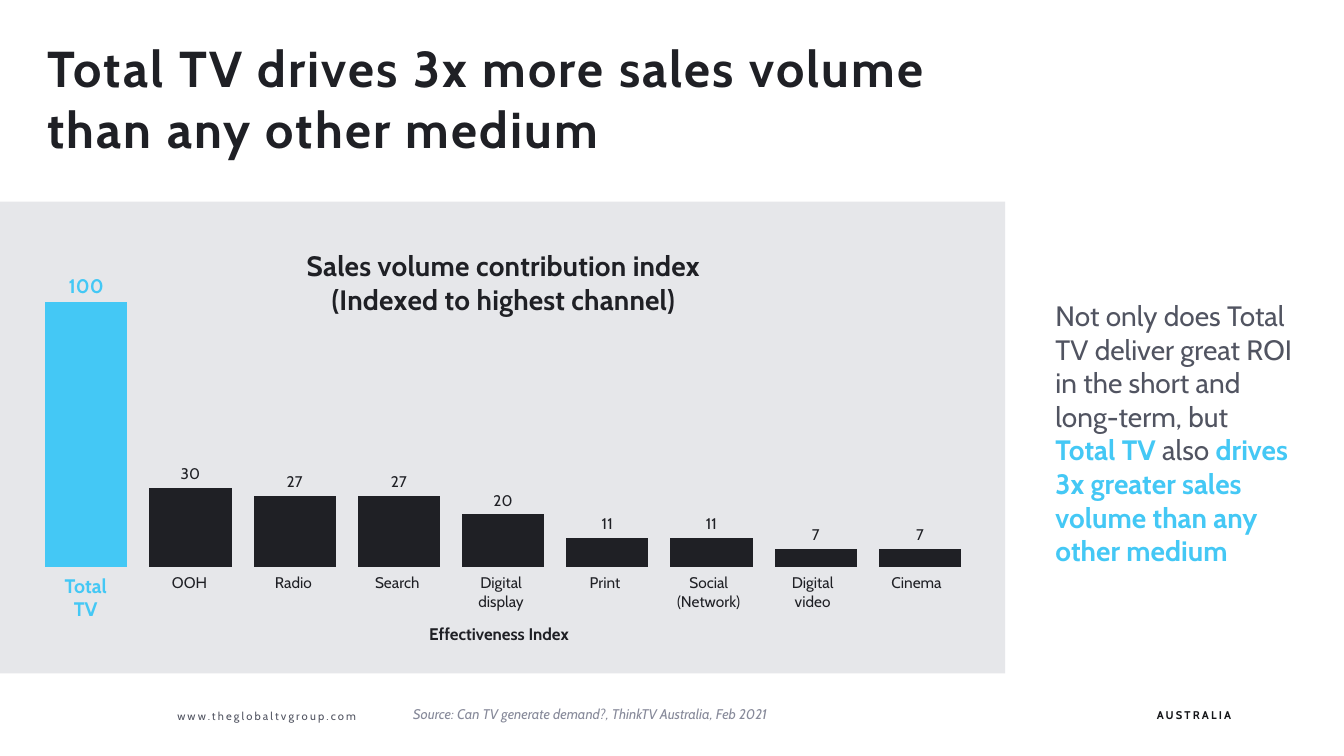
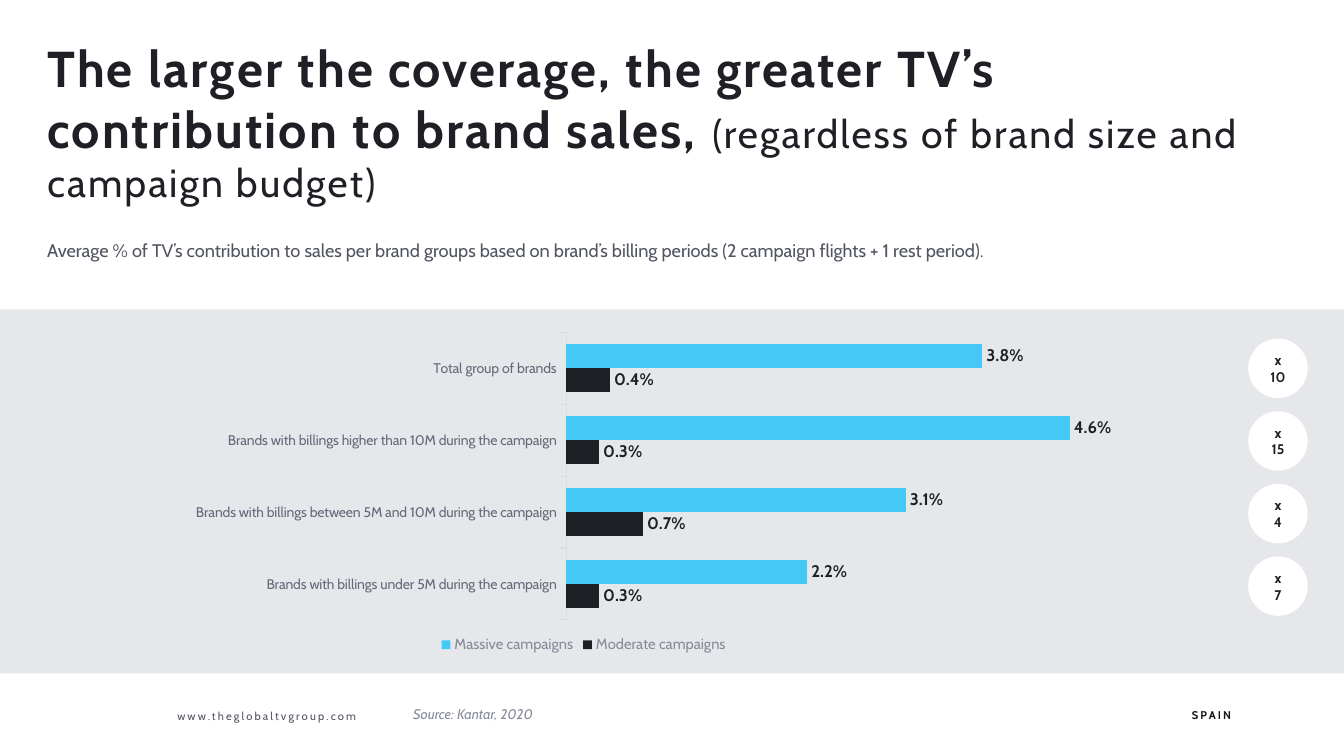
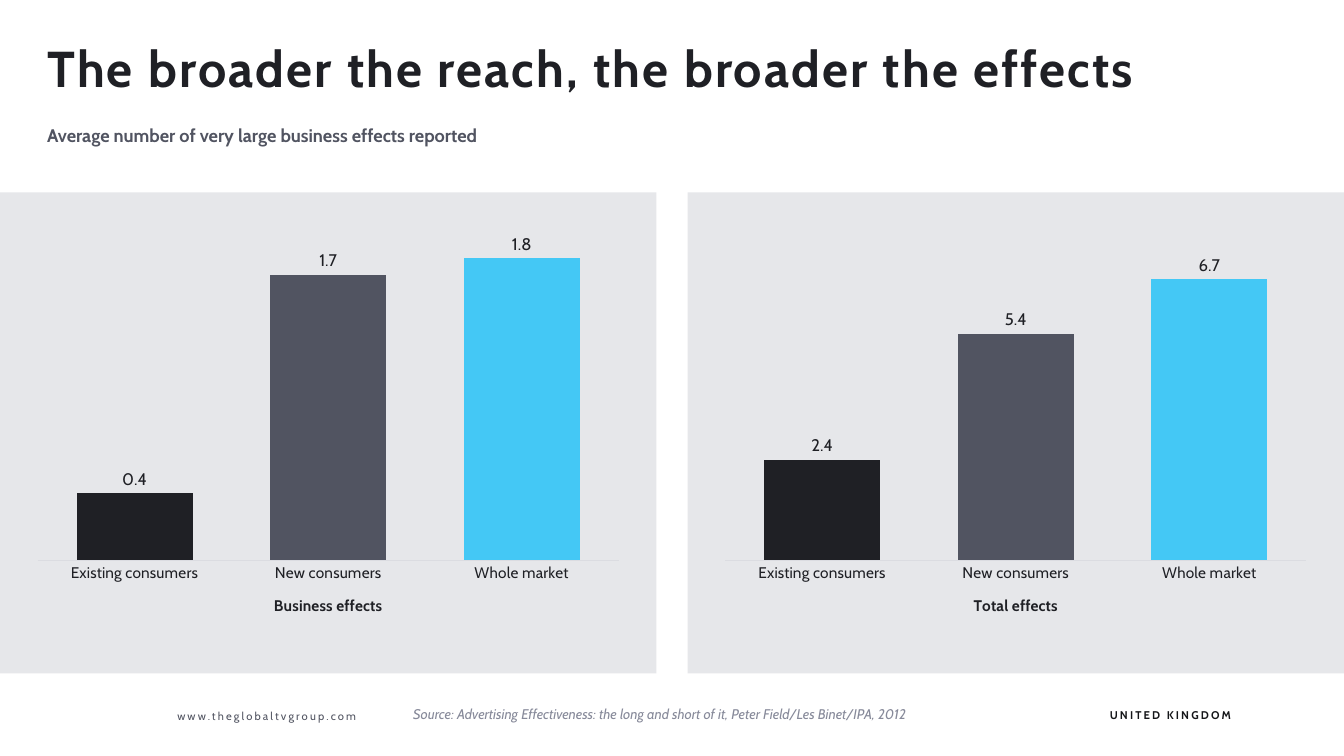
from pptx import Presentation
from pptx.chart.data import CategoryChartData
from pptx.dml.color import RGBColor
from pptx.enum.chart import XL_CHART_TYPE, XL_LABEL_POSITION, XL_LEGEND_POSITION, XL_TICK_MARK
from pptx.enum.shapes import MSO_SHAPE
from pptx.enum.text import MSO_ANCHOR, MSO_AUTO_SIZE, PP_ALIGN
from pptx.oxml import parse_xml
from pptx.oxml.ns import nsdecls, qn
from pptx.util import Inches, Pt

COLUMNS, BARS = XL_CHART_TYPE.COLUMN_CLUSTERED, XL_CHART_TYPE.BAR_CLUSTERED
RECT, OVAL = MSO_SHAPE.RECTANGLE, MSO_SHAPE.OVAL
TOP, MIDDLE = MSO_ANCHOR.TOP, MSO_ANCHOR.MIDDLE
LEFT, CENTER, RIGHT = PP_ALIGN.LEFT, PP_ALIGN.CENTER, PP_ALIGN.RIGHT
OUTSIDE_END = XL_LABEL_POSITION.OUTSIDE_END

FONT = "Cabin"
COLORS = {
    "black": "1F2025", "footer": "151619", "slate": "515461", "label": "666979",
    "grey": "878A9A", "line": "DBDCE1", "panel": "E6E7EA", "blue": "44C8F5", "white": "FFFFFF",
}
WIDTH, HEIGHT = 13.33, 7.5
MARGIN, CONTENT_W = 0.37, 12.59
PANEL_BOTTOM = 6.68

TITLE = {"size": 36, "bold": True, "color": "black", "spc": 1.5}
TITLE_LIGHT = {**TITLE, "size": 28, "bold": False}
SUBTITLE = {"size": 13, "color": "slate"}
SITE = {"size": 8, "color": "slate", "spc": 1.5}
COUNTRY = {"size": 8, "bold": True, "color": "footer", "spc": 1.5}
SOURCE = {"size": 10, "italic": True, "color": "grey"}
BODY = {"size": 20, "color": "slate"}
BODY_BLUE = {"size": 20, "bold": True, "color": "blue"}
CHART_TITLE = {"size": 20, "bold": True, "color": "black"}
AXIS_TITLE = {"size": 11, "bold": True, "color": "black"}
BAR_NAME = {"size": 11, "color": "black"}
BAR_NAME_BLUE = {"size": 14, "bold": True, "color": "blue"}
INDEX_NAME = {"size": 12, "bold": True, "color": "black"}
VALUE = {"size": 12, "color": "black"}
VALUE_BOLD = {**VALUE, "bold": True}

SITE_NAME = "www.theglobaltvgroup.com"

# Text is a list of paragraphs; a paragraph is a list of (text, format) runs.
SALES = {
    "title": [[("Total TV drives 3x more sales volume", TITLE)], [("than any other medium", TITLE)]],
    "source": "Source: Can TV generate demand?, ThinkTV Australia, Feb 2021",
    "country": "AUSTRALIA",
    "chart_title": [[("Sales volume contribution index", CHART_TITLE)],
                    [("(Indexed to highest channel)", CHART_TITLE)]],
    "media": [("Total TV", 100), ("OOH", 30), ("Radio", 27), ("Search", 27),
              ("Digital\ndisplay", 20), ("Print", 11), ("Social\n(Network)", 11),
              ("Digital video", 7), ("Cinema", 7)],
    "message": [[("Not only does Total TV deliver great ROI in the short and long-term, but \n", BODY),
                 ("Total TV ", BODY_BLUE), ("also ", BODY),
                 ("drives 3x greater sales volume than any other medium", BODY_BLUE)]],
}
COVERAGE = {
    "title": [[("The larger the coverage, the greater TV’s contribution to brand sales, ", TITLE),
               ("(regardless of brand size and campaign budget)", TITLE_LIGHT)]],
    "source": "Source: Kantar, 2020",
    "country": "SPAIN",
    "subtitle": "Average % of TV’s contribution to sales per brand groups based on brand’s "
                "billing periods (2 campaign flights + 1 rest period).",
    "groups": ["Brands with billings under 5M during the campaign",
               "Brands with billings between 5M and 10M during the campaign",
               "Brands with billings higher than 10M during the campaign",
               "Total group of brands"],
    "series": [("Moderate campaigns", [0.003, 0.007, 0.003, 0.004]),
               ("Massive campaigns", [0.022, 0.031, 0.046, 0.038])],
    "factors": [10, 15, 4, 7],
}
REACH = {
    "title": [[("The broader the reach, the broader the effects", TITLE)]],
    "source": "Source: Advertising Effectiveness: the long and short of it, "
              "Peter Field/Les Binet/IPA, 2012",
    "country": "UNITED KINGDOM",
    "subtitle": "Average number of very large business effects reported",
    "audiences": ["Existing consumers", "New consumers", "Whole market"],
    "effects": [("Business effects", [0.4, 1.7, 1.8], 2), ("Total effects", [2.4, 5.4, 6.7], 8)],
}


def rgb(name):
    return RGBColor.from_string(COLORS[name])


def box(*lengths):
    return [Inches(n) for n in lengths]


def set_font(font, fmt):
    font.name = FONT
    for key, value in fmt.items():
        if key == "size":
            font.size = Pt(value)
        elif key == "color":
            font.color.rgb = rgb(value)
        elif key != "spc":
            setattr(font, key, value)


def write(tf, paragraphs, align=None, after=None):
    for i, runs in enumerate(paragraphs):
        p = tf.paragraphs[0] if i == 0 else tf.add_paragraph()
        if align is not None:
            p.alignment = align
        if after is not None:
            p.space_after = Pt(after)
        for text, fmt in runs:
            for j, line in enumerate(text.split("\n")):
                if j:
                    p.add_line_break()
                if line:
                    r = p.add_run()
                    r.text = line
                    set_font(r.font, fmt)
                    if "spc" in fmt:
                        r.font._element.set("spc", str(int(fmt["spc"] * 100)))


def add_text(slide, at, paragraphs, align=LEFT, anchor=TOP, after=None):
    tf = slide.shapes.add_textbox(*box(*at)).text_frame
    tf.word_wrap = True
    tf.vertical_anchor = anchor
    write(tf, paragraphs, align, after)


def add_plain_shape(slide, kind, at, color):
    sp = slide.shapes.add_shape(kind, *box(*at))
    sp.shadow.inherit = False
    sp.fill.solid()
    sp.fill.fore_color.rgb = rgb(color)
    sp.line.fill.background()
    return sp


def add_panel(slide, left, top, width):
    add_plain_shape(slide, RECT, (left, top, width, PANEL_BOTTOM - top), "panel")


def add_slide(prs, content):
    """Add a slide with the title and footer that all slides share."""
    slide = prs.slides.add_slide(prs.slide_layouts[5])
    title = slide.shapes.title
    title.left, title.top, title.width, title.height = box(MARGIN, 0.32, CONTENT_W, 0.73)
    tf = title.text_frame
    tf.word_wrap = True
    tf.auto_size = MSO_AUTO_SIZE.NONE
    tf.vertical_anchor = TOP
    write(tf, content["title"], LEFT)
    add_text(slide, (1.66, 6.98, 2.79, 0.24), [[(SITE_NAME, SITE)]], anchor=MIDDLE)
    add_text(slide, (4, 6.95, 7.57, 0.27), [[(content["source"], SOURCE)]])
    add_text(slide, (9.43, 6.97, 2.88, 0.25), [[(content["country"], COUNTRY)]], RIGHT, MIDDLE)
    return slide


def add_bar_chart(slide, kind, at, categories, series, plot_box, scale, gap, overlap, fmt):
    """Add a clustered chart with a hidden value axis and a fixed plot area."""
    data = CategoryChartData(number_format=fmt)
    data.categories = categories
    for name, values in series:
        data.add_series(name, values)
    chart = slide.shapes.add_chart(kind, *box(*at), data).chart
    set_font(chart.font, {"size": 10, "color": "black"})
    chart.has_title = chart.has_legend = False
    plot = chart.plots[0]
    plot.vary_by_categories = False
    plot.gap_width, plot.overlap = gap, overlap
    axis = chart.value_axis
    axis.minimum_scale, axis.maximum_scale = scale
    axis.has_major_gridlines = False
    axis.visible = False

    area = chart._chartSpace.chart.plotArea
    for old in area.findall(qn("c:layout")):
        area.remove(old)
    parts = "".join(f'<c:{k} val="{v}"/>' for k, v in zip("xywh", plot_box))
    area.insert(0, parse_xml(
        f'<c:layout {nsdecls("c")}><c:manualLayout><c:layoutTarget val="inner"/>'
        f'<c:xMode val="edge"/><c:yMode val="edge"/>{parts}</c:manualLayout></c:layout>'))
    return chart


def style_series(series, color, label, fmt):
    series.format.fill.solid()
    series.format.fill.fore_color.rgb = rgb(color)
    series.invert_if_negative = False
    labels = series.data_labels
    labels.show_value = True
    labels.position = OUTSIDE_END
    labels.number_format, labels.number_format_is_linked = fmt, False
    set_font(labels.font, label)


def style_category_axis(axis, tick, label):
    axis.major_tick_mark = tick
    axis.minor_tick_mark = XL_TICK_MARK.NONE
    axis.format.line.color.rgb = rgb("line")
    axis.format.line.width = Pt(0.75)
    set_font(axis.tick_labels.font, label)


def build_sales(prs):
    slide = add_slide(prs, SALES)
    add_panel(slide, 0, 2, 9.97)
    add_text(slide, (10.37, 1.92, 2.6, 4.75), SALES["message"], anchor=MIDDLE, after=12)

    media = SALES["media"]
    series = [(f"Series {i}", [value]) for i, (_, value) in enumerate(media, 1)]
    chart = add_bar_chart(slide, COLUMNS, (0.44, 2.28, 9.11, 4.23), ["1"], series,
                          (0.001, 0.108, 0.997, 0.746), (-10, 110), 0, -27, "0")
    chart.has_title = True
    write(chart.chart_title.text_frame, SALES["chart_title"])
    chart.category_axis.visible = False

    bar_w, pitch = 0.82, 1.03
    for i, (s, (name, _)) in enumerate(zip(chart.plots[0].series, media)):
        lead = i == 0
        label = BAR_NAME_BLUE if lead else BAR_NAME
        style_series(s, "blue" if lead else "black", label, "0")
        width = 1.04 if "(" in name else bar_w
        left = 0.44 + i * pitch + (bar_w - width) / 2
        add_text(slide, (left, 5.64, width, 0.47), [[(name, label)]], CENTER, after=12)
    add_text(slide, (0.36, 6.14, 9.18, 0.3), [[("Effectiveness Index", INDEX_NAME)]], CENTER)


def build_coverage(prs):
    slide = add_slide(prs, COVERAGE)
    add_panel(slide, 0, 3.07, WIDTH)
    add_text(slide, (MARGIN, 2.33, CONTENT_W, 0.33), [[(COVERAGE["subtitle"], SUBTITLE)]])

    chart = add_bar_chart(slide, BARS, (MARGIN, 3.21, 10.84, 3.32), COVERAGE["groups"],
                          COVERAGE["series"], (0.384, 0.026, 0.601, 0.86),
                          (-0.01, 0.05), 100, 0, "0.0%")
    for s, color in zip(chart.plots[0].series, ("black", "blue")):
        style_series(s, color, VALUE_BOLD, "0.0%")
    style_category_axis(chart.category_axis, XL_TICK_MARK.OUTSIDE, {"size": 10, "color": "label"})
    chart.has_legend = True
    chart.legend.position = XL_LEGEND_POSITION.BOTTOM
    chart.legend.include_in_layout = False
    set_font(chart.legend.font, {"size": 10.5, "color": "grey"})

    size, pitch = 0.59, 0.72
    for i, factor in enumerate(COVERAGE["factors"]):
        sp = add_plain_shape(slide, OVAL, (12.38, 3.36 + i * pitch, size, size), "white")
        sp.text_frame.vertical_anchor = MIDDLE
        write(sp.text_frame, [[(f"x\n{factor}", {"size": 10, "bold": True, "color": "black"})]], CENTER)


def build_reach(prs):
    slide = add_slide(prs, REACH)
    add_text(slide, (MARGIN, 1.18, CONTENT_W, 0.33),
             [[(REACH["subtitle"], {**SUBTITLE, "bold": True})]])

    panel_w, chart_w = 6.51, 5.77
    panel_lefts = (0, WIDTH - panel_w)
    chart_lefts = (MARGIN, WIDTH - MARGIN - chart_w)
    for panel_left, left, (name, values, top) in zip(panel_lefts, chart_lefts, REACH["effects"]):
        add_panel(slide, panel_left, 1.91, panel_w)
        chart = add_bar_chart(slide, COLUMNS, (left, 2.05, chart_w, 4.26), REACH["audiences"],
                              [("Series 1", values)], (0, 0.042, 1, 0.782),
                              (0, top), 67, -27, "General")
        s = chart.plots[0].series[0]
        style_series(s, "blue", VALUE, "General")
        for i, color in enumerate(("black", "slate")):
            fill = s.points[i].format.fill
            fill.solid()
            fill.fore_color.rgb = rgb(color)
        axis = chart.category_axis
        style_category_axis(axis, XL_TICK_MARK.NONE, BAR_NAME)
        axis.has_title = True
        write(axis.axis_title.text_frame, [[(name, AXIS_TITLE)]])


def main():
    prs = Presentation()
    prs.slide_width, prs.slide_height = box(WIDTH, HEIGHT)
    for build in (build_sales, build_coverage, build_reach):
        build(prs)
    prs.save("out.pptx")


if __name__ == "__main__":
    main()
